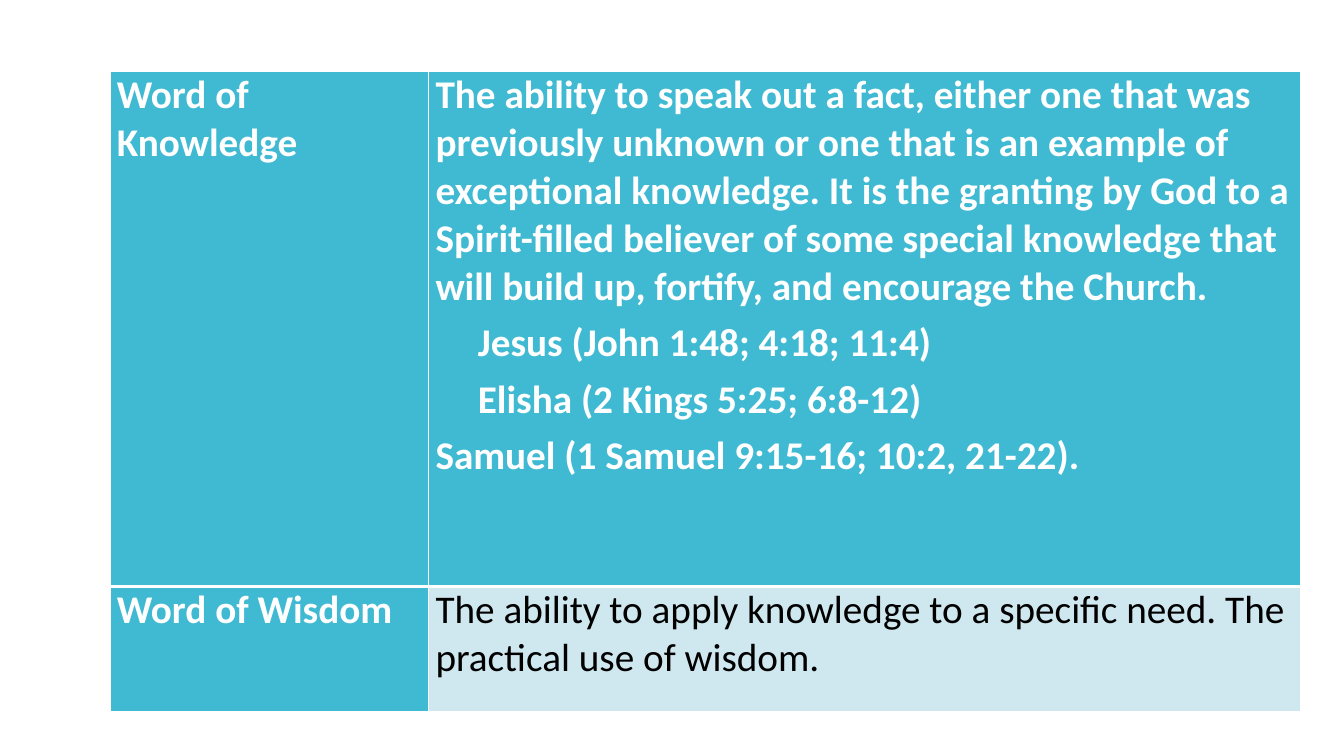
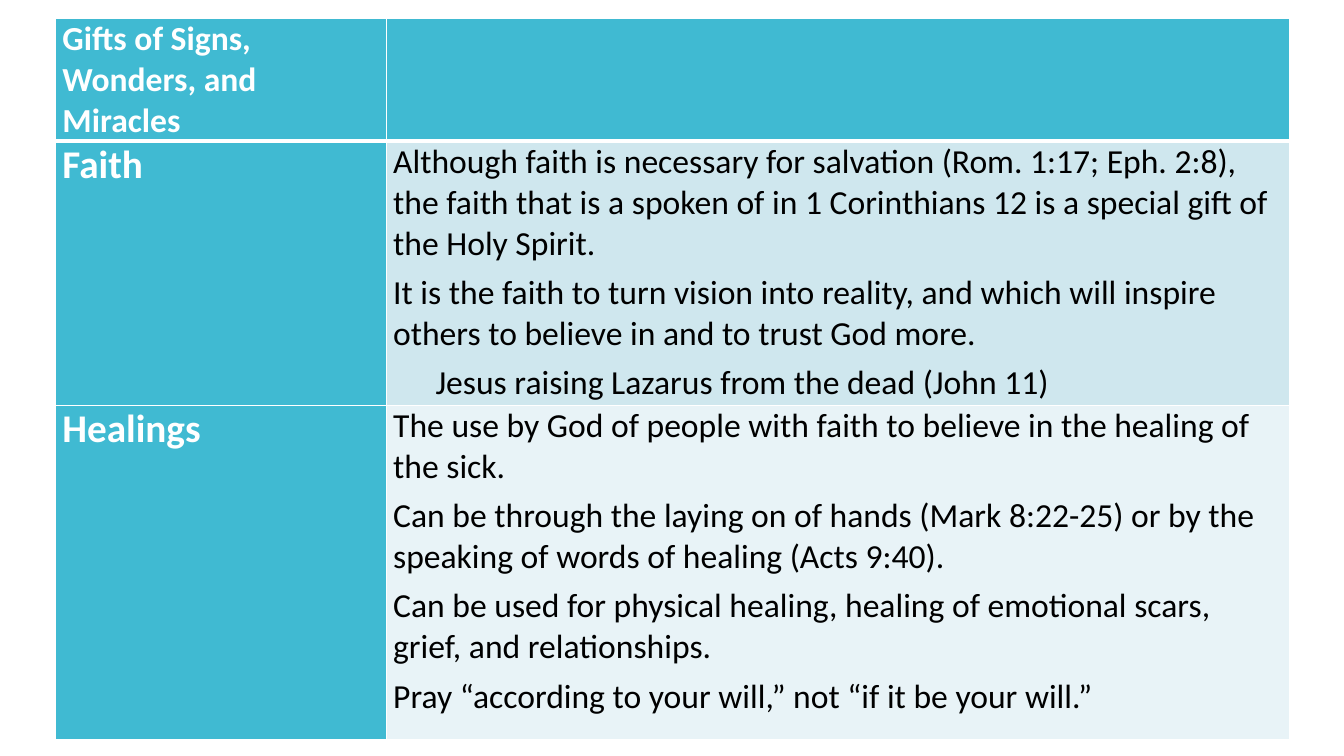
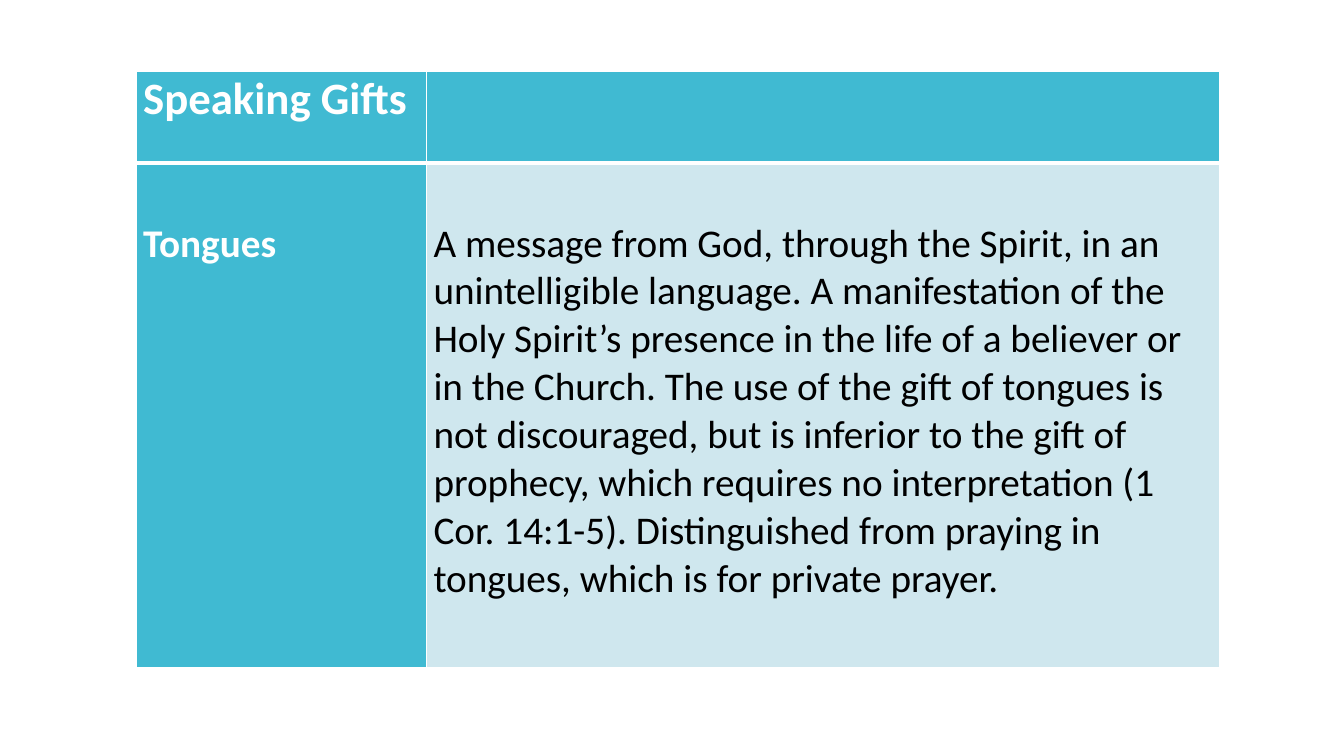
import pptx
import pptx.util
import pptx.dml.color
import pptx.oxml
import pptx.oxml.ns

Inches = pptx.util.Inches
Pt = pptx.util.Pt

FONT = "Calibri"
HUES = {
    "head": "40BAD2",
    "dark": "CFE7EE",
    "light": "E8F3F7",
    "white": "FFFFFF",
    "black": "000000",
}


def tint(name):
    return pptx.dml.color.RGBColor.from_string(HUES[name])


def add_edge(cell, side, width):
    mark = pptx.oxml.parse_xml(
        f'<a:ln{side} {pptx.oxml.ns.nsdecls("a")} w="{Pt(width)}">'
        f'<a:solidFill><a:srgbClr val="{HUES["white"]}"/></a:solidFill>'
        f'</a:ln{side}>'
    )
    cell._tc.get_or_add_tcPr().append(mark)


def paint(cell, row, fill, top):
    cell.margin_left = cell.margin_right = Inches(0.07)
    cell.margin_top = Inches(top)
    cell.margin_bottom = 0
    thick = {0: "B", 1: "T"}.get(row)
    for side in "LRTB":
        add_edge(cell, side, 3 if side == thick else 1)
    cell.fill.solid()
    cell.fill.fore_color.rgb = tint(fill)


def write(cell, lines, size, color, bold):
    frame = cell.text_frame
    for i, (text, indent) in enumerate(lines):
        para = frame.paragraphs[0] if i == 0 else frame.add_paragraph()
        para.space_after = Pt(6)
        if indent:
            para._p.get_or_add_pPr().set("marL", str(Inches(indent)))
        run = para.add_run()
        run.text = text
        font = run.font
        font.name = FONT
        font.size = Pt(size)
        font.bold = bold
        font.color.rgb = tint(color)


def flush(*texts):
    return [(text, 0) for text in texts]


def inset(*texts):
    return [(text, 0.42) for text in texts]


def add_grid(deck, left, top, widths, rows):
    slide = deck.slides.add_slide(deck.slide_layouts[6])
    high = sum(row["high"] for row in rows)
    grid = slide.shapes.add_table(
        len(rows), 2, Inches(left), Inches(top), Inches(sum(widths)), Inches(high)
    ).table
    grid.horz_banding = False
    for col, width in zip(grid.columns, widths):
        col.width = Inches(width)
    for r, row in enumerate(rows):
        grid.rows[r].height = Inches(row["high"])
        parts = [(flush(row["label"]), row["size"]), (row["body"], row.get("small", 28))]
        for c, (lines, size) in enumerate(parts):
            head = r == 0 or c == 0
            fill = "head" if head else ("dark" if r % 2 else "light")
            cell = grid.cell(r, c)
            paint(cell, r, fill, row.get("top", 0))
            write(cell, lines, size, "white" if head else "black", head)


def main():
    deck = pptx.Presentation()
    deck.slide_width = Inches(13.33)
    deck.slide_height = Inches(7.5)

    add_grid(deck, 1.09, 0.71, (3.16, 8.65), [
        {"high": 5.11, "label": "Word of Knowledge", "size": 28, "body": flush(
            "The ability to speak out a fact, either one that was previously unknown "
            "or one that is an example of exceptional knowledge. It is the granting by "
            "God to a Spirit-filled believer of some special knowledge that will build "
            "up, fortify, and encourage the Church.")
            + inset("Jesus (John 1:48; 4:18; 11:4)", "Elisha (2 Kings 5:25; 6:8-12)")
            + flush("Samuel (1 Samuel 9:15-16; 10:2, 21-22).")},
        {"high": 1.24, "label": "Word of Wisdom", "size": 28, "body": flush(
            "The ability to apply knowledge to a specific need. "
            "The practical use of wisdom.")},
    ])

    add_grid(deck, 0.55, 0.18, (3.28, 8.96), [
        {"high": 1.2, "label": "Gifts of Signs, Wonders, and Miracles", "size": 24,
         "body": []},
        {"high": 2.62, "label": "Faith", "size": 28, "small": 24, "body": flush(
            "Although faith is necessary for salvation (Rom. 1:17; Eph. 2:8), the faith "
            "that is a spoken of in 1 Corinthians 12 is a special gift of the Holy Spirit.",
            "It is the faith to turn vision into reality, and which will inspire others "
            "to believe in and to trust God more.")
            + inset("Jesus raising Lazarus from the dead (John 11)")},
        {"high": 3.32, "label": "Healings", "size": 28, "small": 24, "body": flush(
            "The use by God of people with faith to believe in the healing of the sick.",
            "Can be through the laying on of hands (Mark 8:22-25) or by the speaking of "
            "words of healing (Acts 9:40).",
            "Can be used for physical healing, healing of emotional scars, grief, and "
            "relationships.",
            "Pray “according to your will,” not “if it be your will.”")},
    ])

    add_grid(deck, 1.35, 0.71, (2.88, 7.87), [
        {"high": 0.91, "label": "Speaking Gifts", "size": 32, "body": []},
        {"high": 5, "label": "Tongues", "size": 28, "top": 0.56, "body": flush(
            "A message from God, through the Spirit, in an unintelligible language. "
            "A manifestation of the Holy Spirit’s presence in the life of a believer or "
            "in the Church. The use of the gift of tongues is not discouraged, but is "
            "inferior to the gift of prophecy, which requires no interpretation "
            "(1 Cor. 14:1-5). Distinguished from praying in tongues, which is for "
            "private prayer.")},
    ])

    deck.save("out.pptx")


if __name__ == "__main__":
    main()
